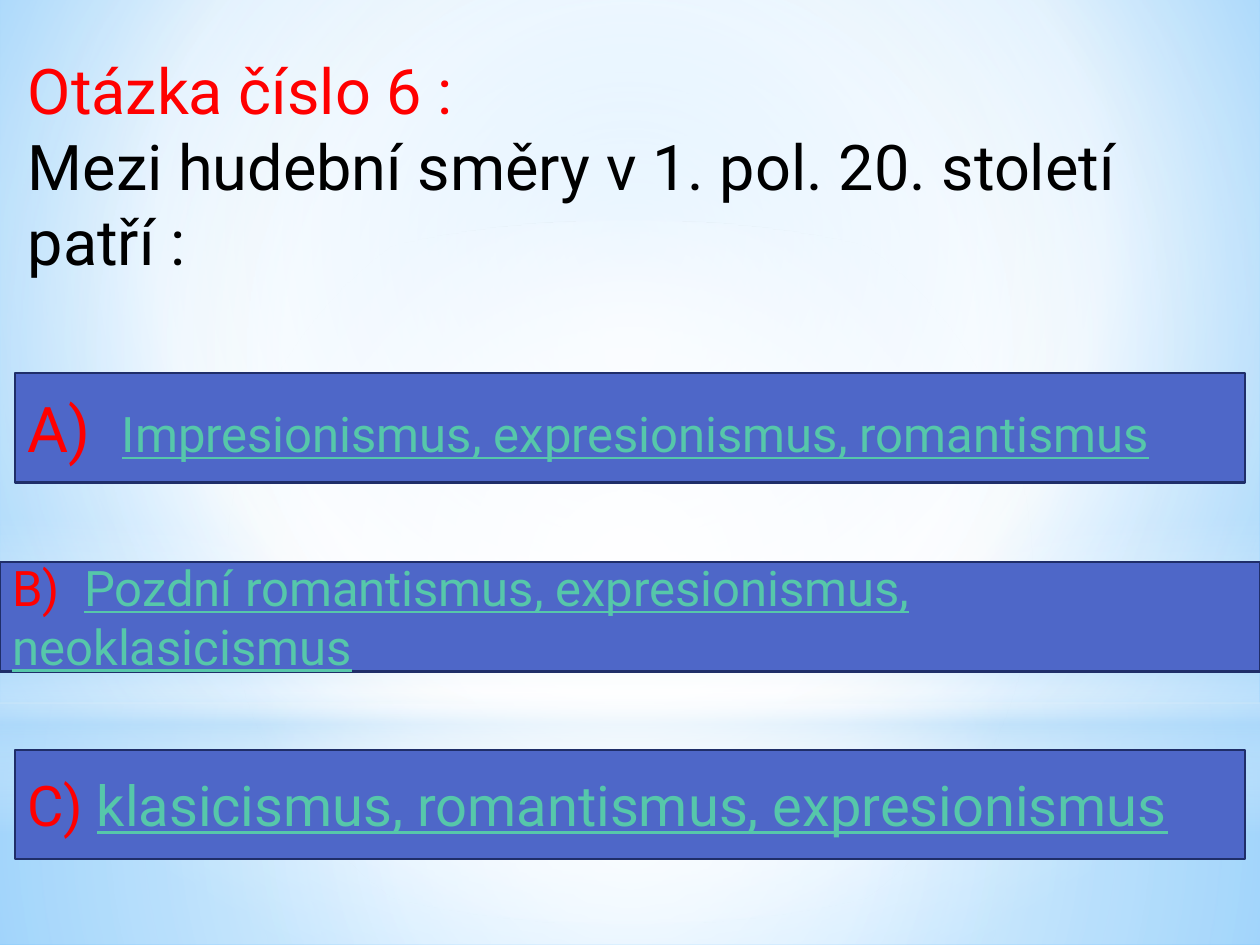
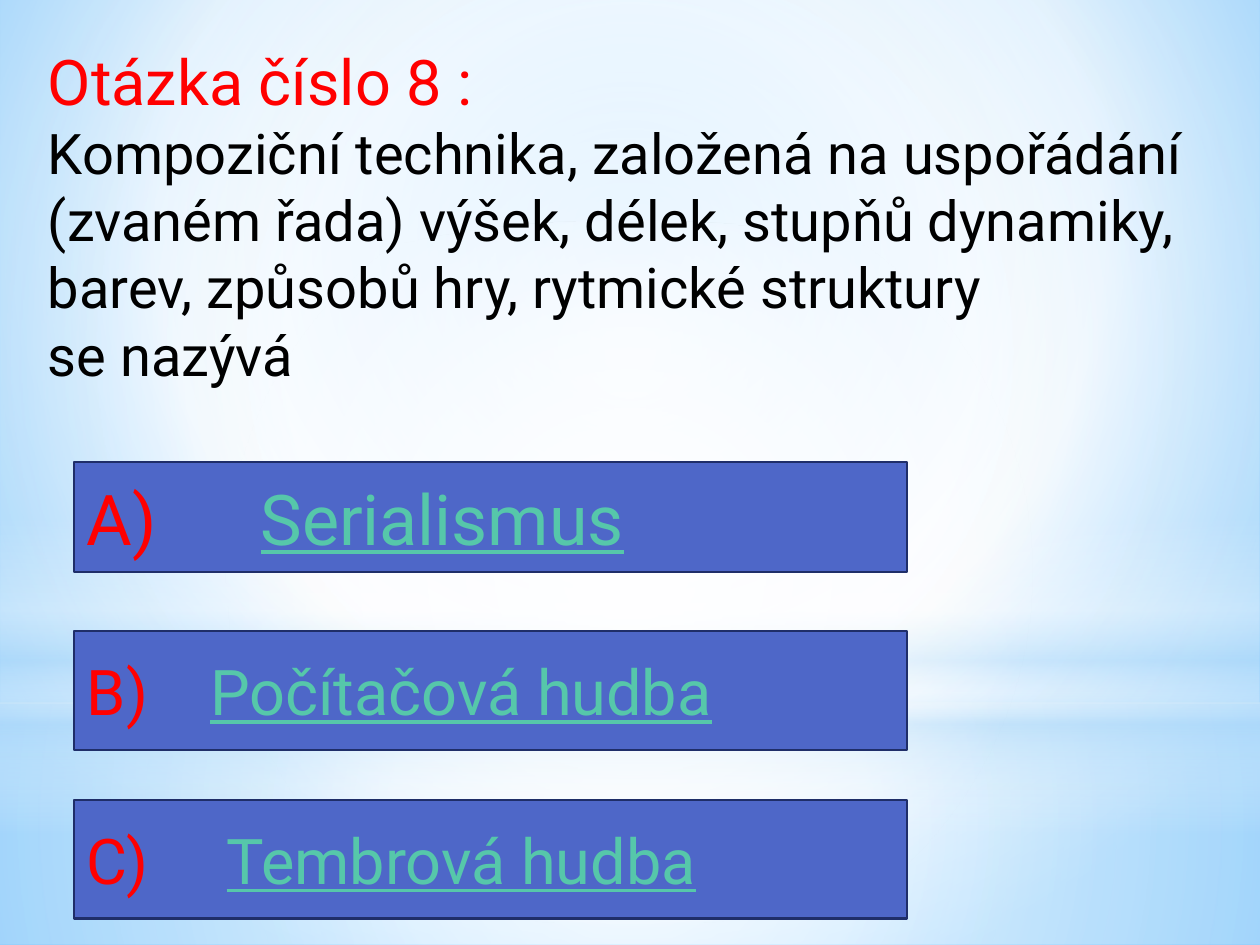
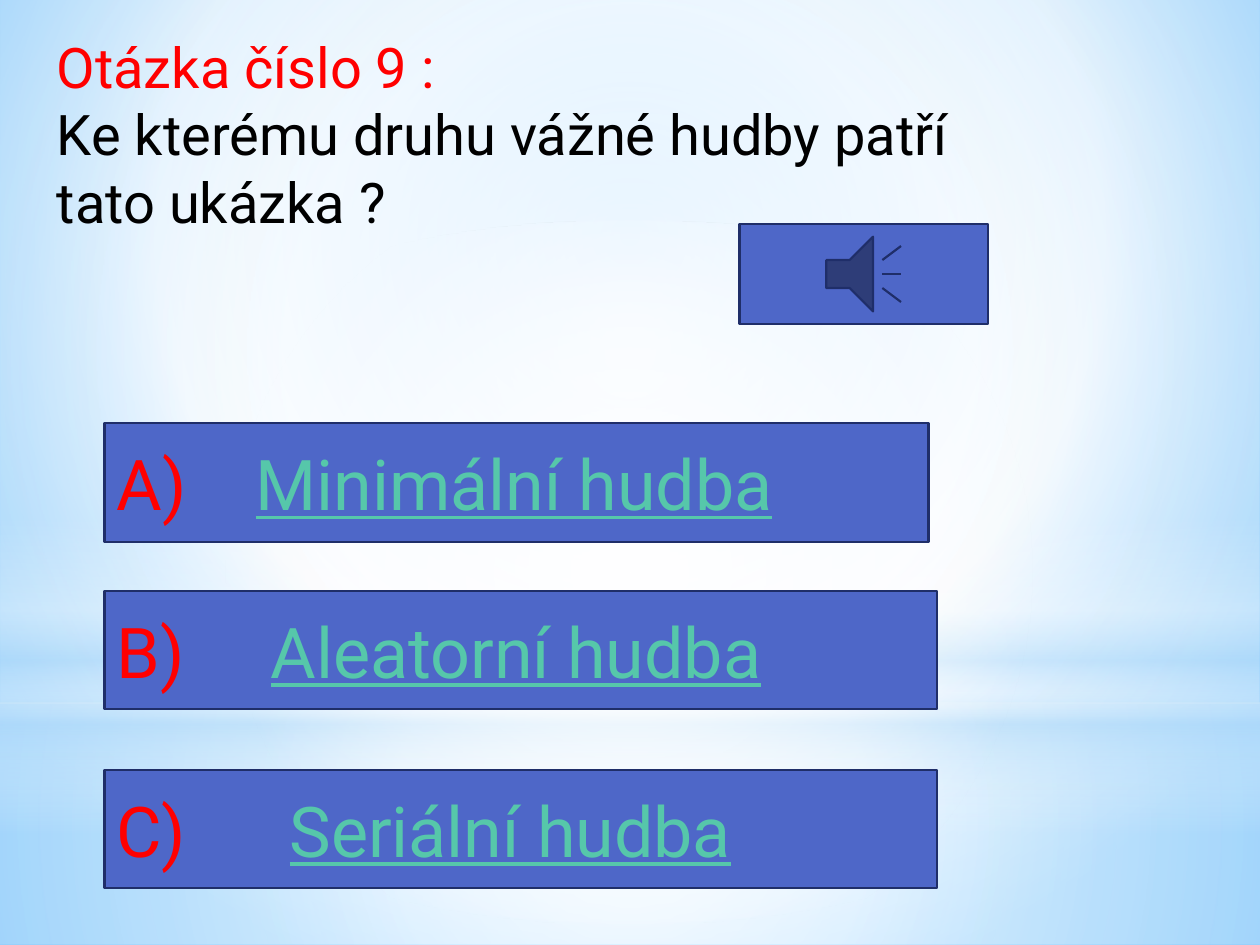
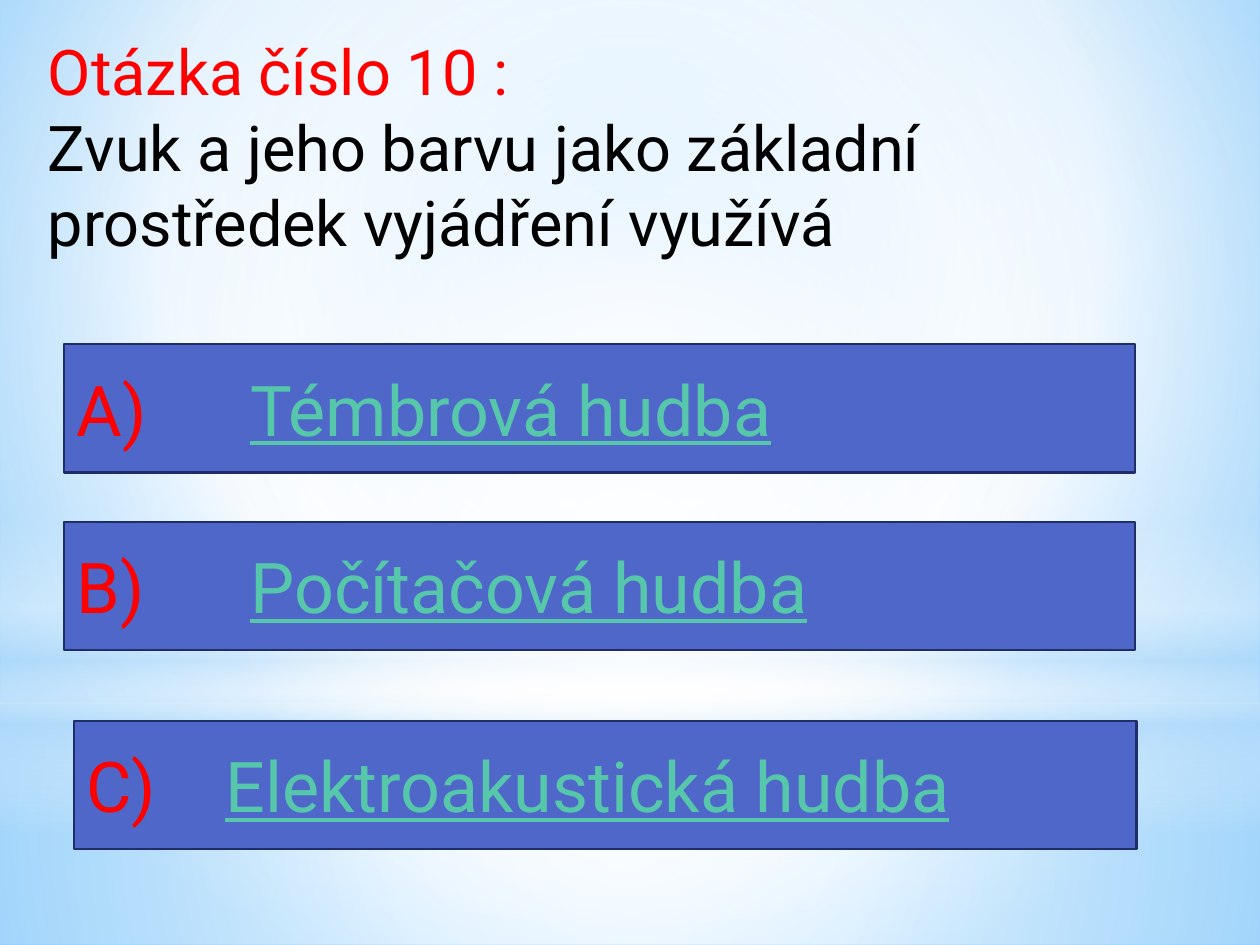
import dataclasses

import lxml.etree
import pptx
import pptx.dml.color
import pptx.enum.shapes
import pptx.enum.text
import pptx.oxml.ns
import pptx.util

Inches = pptx.util.Inches
Shapes = pptx.enum.shapes.MSO_SHAPE
RGB = pptx.dml.color.RGBColor.from_string


@dataclasses.dataclass(frozen=True)
class Theme:
    font: str = "Roboto"
    accent: str = "FF0000"
    text: str = "000000"
    answer: str = "56C7AA"
    box: str = "4E67C8"
    box_line: str = "1F2E69"
    box_line_width: float = 1.25
    white: str = "FFFFFF"
    sky: str = "B4DCFA"
    sky_top: str = "9ED5FF"
    sky_edge: str = "5BB9FF"
    small: int = 28
    medium: int = 32
    large: int = 36
    huge: int = 40


theme = Theme()


def gradient_fill(stops, focus=None):
    """Return a gradFill of (position, colour, opacity) stops, radial when a focus is given."""
    stop_xml = "".join(
        f'<a:gs pos="{position * 1000}"><a:srgbClr val="{colour}">'
        f'<a:alpha val="{opacity * 1000}"/></a:srgbClr></a:gs>'
        for position, colour, opacity in stops
    )
    if focus:
        left, top, right, bottom = (value * 1000 for value in focus)
        direction = (f'<a:path path="circle"><a:fillToRect l="{left}" t="{top}" '
                     f'r="{right}" b="{bottom}"/></a:path>')
    else:
        direction = '<a:lin ang="5400000" scaled="0"/>'
    return pptx.oxml.parse_xml(
        f'<a:gradFill {pptx.oxml.ns.nsdecls("a")} rotWithShape="1">'
        f"<a:gsLst>{stop_xml}</a:gsLst>{direction}</a:gradFill>"
    )


def add_text(paragraph, text, size, colour, underline=False):
    """Add text to a paragraph, with a line break at each newline."""
    for index, line in enumerate(text.split("\n")):
        if index:
            paragraph.add_line_break()
        if not line:
            continue
        run = paragraph.add_run()
        run.text = line
        formats = {"name": theme.font, "size": pptx.util.Pt(size), "bold": False, "underline": underline}
        for name, value in formats.items():
            setattr(run.font, name, value)
        run.font.color.rgb = RGB(colour)


presentation = pptx.Presentation()
presentation.slide_width = Inches(10)
presentation.slide_height = Inches(7.5)
title_only = presentation.slide_layouts[5]
master = presentation.slide_master

# Shared background: a radial sky with soft bands of light on the master
master.background.fill.solid()
solid = master.element.find(".//" + pptx.oxml.ns.qn("p:bgPr"))[0]
sky_stops = [(0, theme.sky_top, 100), (60, theme.white, 100), (100, theme.sky_edge, 100)]
solid.getparent().replace(solid, gradient_fill(sky_stops, (20, 10, 20, 60)))

centre = (50, 50, 50, 50)
bands = [
    (Shapes.RECTANGLE, 5.58, 1.92, centre,
     [(0, theme.white, 91), (37, theme.white, 76), (100, theme.sky, 79)]),
    (Shapes.RECTANGLE, 0, 5.58, centre,
     [(0, theme.white, 89), (48, theme.white, 62), (100, theme.sky, 79)]),
    (Shapes.RECTANGLE, 4.12, 2.5, None,
     [(0, theme.white, 0), (29, theme.white, 30), (45, theme.sky, 40),
      (55, theme.white, 26), (65, theme.sky, 60), (100, theme.white, 0)]),
    (Shapes.OVAL, 1.75, 5.58, centre,
     [(0, theme.white, 100), (56, theme.white, 0)]),
]

# Each question: number, title size, text, text size, title box,
# and answers as (text, letter size, text size, tab stop, box)
small, medium, large, huge = theme.small, theme.medium, theme.large, theme.huge
questions = [
    (6, large, "Mezi hudební směry v 1. pol. 20. století\npatří :", large, (0.12, 0.36, 9.21, 2.22), [
        ("Impresionismus, expresionismus, romantismus", large, small, 0.75, (0.12, 2.96, 9.76, 0.87)),
        ("Pozdní romantismus, expresionismus, neoklasicismus", small, small, 0.57, (0, 4.46, 10, 0.87)),
        ("klasicismus, romantismus, expresionismus", medium, medium, 0.55, (0.12, 5.95, 9.76, 0.87)),
    ]),
    (8, large, "Kompoziční technika, založená na uspořádání (zvaném řada) výšek, délek, stupňů dynamiky, "
     "barev, způsobů hry, rytmické struktury \nse nazývá", medium, (0.28, 0.29, 9.53, 4.07), [
        ("Serialismus", huge, huge, 1.38, (0.59, 3.67, 6.61, 0.87)),
        ("Počítačová hudba", large, large, 0.98, (0.59, 5.01, 6.61, 0.94)),
        ("Tembrová hudba", large, large, 1.11, (0.59, 6.35, 6.61, 0.94)),
    ]),
    (9, medium, "Ke kterému druhu vážné hudby patří \ntato ukázka ?", medium, (0.35, 0.21, 9.13, 2.56), [
        ("Minimální hudba", huge, huge, 1.1, (0.83, 3.36, 6.54, 0.94)),
        ("Aleatorní hudba", huge, huge, 1.22, (0.83, 4.69, 6.61, 0.94)),
        ("Seriální hudba", huge, huge, 1.37, (0.83, 6.11, 6.61, 0.94)),
    ]),
    (10, large, "Zvuk a jeho barvu jako základní prostředek vyjádření využívá", large, (0.28, 0.21, 9.29, 2.52), [
        ("Témbrová hudba", huge, huge, 1.38, (0.51, 2.73, 8.5, 1.02)),
        ("Počítačová hudba", huge, huge, 1.38, (0.51, 4.14, 8.5, 1.02)),
        ("Elektroakustická hudba", huge, huge, 1.1, (0.59, 5.72, 8.43, 1.02)),
    ]),
]
sound_buttons = {9: (5.87, 1.78, 1.97, 0.79)}

for number, title_size, question, question_size, title_box, answers in questions:
    slide = presentation.slides.add_slide(title_only)

    # The bands are drawn once, then moved behind the master's placeholders
    if number == questions[0][0]:
        for index, (kind, top, height, focus, stops) in enumerate(bands):
            band = slide.shapes.add_shape(kind, 0, Inches(top), Inches(10), Inches(height))
            band.shadow.inherit = False
            band.line.fill.background()
            band.fill.solid()
            fill = band.element.spPr.find(pptx.oxml.ns.qn("a:solidFill"))
            band.element.spPr.replace(fill, gradient_fill(stops, focus))
            band.element.nvSpPr.cNvPr.id = 20 + index
            master.shapes.element.insert(2 + index, band.element)

    title = slide.shapes.title
    for name, value in zip(("left", "top", "width", "height"), title_box):
        setattr(title, name, Inches(value))
    title_formats = {
        "word_wrap": True,
        "vertical_anchor": pptx.enum.text.MSO_ANCHOR.TOP,
        "auto_size": pptx.enum.text.MSO_AUTO_SIZE.SHAPE_TO_FIT_TEXT,
    }
    for name, value in title_formats.items():
        setattr(title.text_frame, name, value)
    paragraph = title.text_frame.paragraphs[0]
    paragraph.alignment = pptx.enum.text.PP_ALIGN.LEFT
    add_text(paragraph, f"Otázka číslo {number} :\n", title_size, theme.accent)
    add_text(paragraph, question, question_size, theme.text)

    boxes = []
    if number in sound_buttons:
        position = map(Inches, sound_buttons[number])
        boxes.append(slide.shapes.add_shape(Shapes.ACTION_BUTTON_SOUND, *position))
    for letter, (answer, letter_size, answer_size, tab_stop, position) in zip("ABC", answers):
        box = slide.shapes.add_shape(Shapes.RECTANGLE, *map(Inches, position))
        boxes.append(box)
        box.text_frame.word_wrap = True
        box.text_frame.vertical_anchor = pptx.enum.text.MSO_ANCHOR.MIDDLE
        paragraph = box.text_frame.paragraphs[0]
        paragraph.alignment = pptx.enum.text.PP_ALIGN.LEFT
        tabs = lxml.etree.SubElement(paragraph._p.get_or_add_pPr(), pptx.oxml.ns.qn("a:tabLst"))
        lxml.etree.SubElement(tabs, pptx.oxml.ns.qn("a:tab"), pos=str(Inches(tab_stop)), algn="l")
        add_text(paragraph, f"{letter})\t", letter_size, theme.accent)
        add_text(paragraph, answer, answer_size, theme.answer, underline=True)

    for box in boxes:
        box.shadow.inherit = False
        box.fill.solid()
        box.fill.fore_color.rgb = RGB(theme.box)
        box.line.color.rgb = RGB(theme.box_line)
        box.line.width = pptx.util.Pt(theme.box_line_width)

presentation.save("out.pptx")
